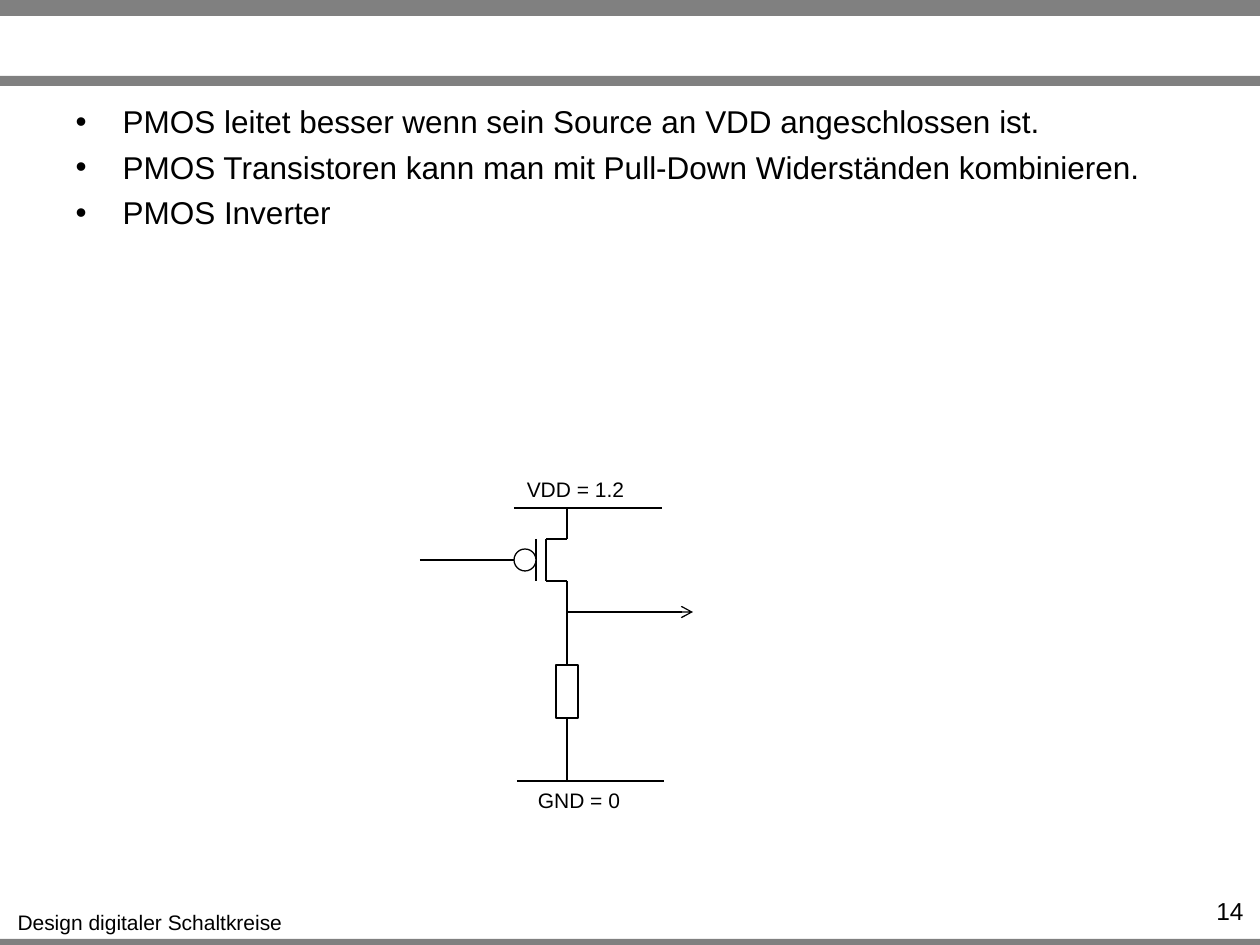
from itertools import pairwise

from lxml.etree import SubElement
from pptx import Presentation
from pptx.dml.color import RGBColor
from pptx.enum.shapes import MSO_CONNECTOR as Link, MSO_SHAPE as Form
from pptx.enum.text import MSO_ANCHOR as Anchor, MSO_AUTO_SIZE as Fit, PP_ALIGN as Align
from pptx.oxml.ns import qn
from pptx.util import Emu, Pt

BLACK = RGBColor(0x00, 0x00, 0x00)
WHITE = RGBColor(0xFF, 0xFF, 0xFF)
GREY = RGBColor(0x80, 0x80, 0x80)
FONT = "Arial"


def px(*nums):
    """Turn px, at 126 to the inch, into EMU."""
    return [Emu(round(n * 914400 / 126)) for n in nums]


def write(par, text, size=12, color=BLACK, align=Align.CENTER):
    par.alignment = align
    run = par.add_run()
    run.text = text
    run.font.name = FONT
    run.font.size = Pt(size)
    run.font.color.rgb = color


class Board:
    def __init__(self, slide, ink=BLACK, width=0.75):
        self.slide, self.ink, self.width = slide, ink, Pt(width)

    def shape(self, form, box, fill=None, edge=True):
        shape = self.slide.shapes.add_shape(form, *px(*box))
        shape.shadow.inherit = False
        if fill is None:
            shape.fill.background()
        else:
            shape.fill.solid()
            shape.fill.fore_color.rgb = fill
        if edge:
            shape.line.color.rgb = self.ink
            shape.line.width = self.width
        else:
            shape.line.fill.background()

    def label(self, text, box, wrap=False, **form):
        frame = self.slide.shapes.add_textbox(*px(*box)).text_frame
        frame.word_wrap = wrap
        write(frame.paragraphs[0], text, **form)

    def bullets(self, items, box):
        body = self.slide.placeholders[1]
        body.left, body.top, body.width, body.height = px(*box)
        frame = body.text_frame
        frame.auto_size = Fit.NONE
        frame.vertical_anchor = Anchor.TOP
        indent = px(47)[0]
        for i, item in enumerate(items):
            par = frame.add_paragraph() if i else frame.paragraphs[0]
            props = par._p.get_or_add_pPr()
            props.set("marL", str(indent))
            props.set("indent", str(-indent))
            par.space_before = Pt(4.4 if i else 0)
            SubElement(props, qn("a:buFont"), typeface=FONT)
            SubElement(props, qn("a:buChar"), char="•")
            write(par, item, size=18, align=Align.LEFT)

    def wire(self, *points, arrow=False):
        """Join the points in turn; an arrow sits at the end of each part."""
        for start, end in pairwise(points):
            line = self.slide.shapes.add_connector(Link.STRAIGHT, *px(*start, *end))
            line.line.color.rgb = self.ink
            line.line.width = self.width
            if arrow:
                SubElement(line.line._get_or_add_ln(), qn("a:tailEnd"), type="arrow")
            SubElement(line._element.spPr, qn("a:effectLst"))


def main():
    deck = Presentation()
    deck.slide_width, deck.slide_height = px(1260, 945)
    slide = deck.slides.add_slide(deck.slide_layouts[1])
    title = slide.shapes.title._element
    title.getparent().remove(title)
    board = Board(slide)

    for top, high in ((939, 10), (0, 16), (76, 10)):
        board.shape(Form.RECTANGLE, (0, top, 1260, high), fill=GREY, edge=False)
    board.label("Design digitaler Schaltkreise", (4, 903, 292, 38))
    board.bullets((
        "PMOS leitet besser wenn sein Source an VDD angeschlossen ist.",
        "PMOS Transistoren kann man mit Pull-Down Widerständen kombinieren.",
        "PMOS Inverter",
    ), (63, 96, 1134, 83))
    board.label("14", (1147, 890, 109, 30), wrap=True, size=14, align=Align.RIGHT)

    # Circuit: all parts hang on one vertical axis between the two rails
    axis, chan, gate, pin = 567, 546, 536, 514
    vdd, source, mid, drain, out, gnd = 508, 539, 560, 581, 612, 781
    rtop, rend = 665, 718

    board.wire((axis, vdd), (axis, source), (chan, source), (chan, drain),
               (axis, drain), (axis, out), (axis, rtop))
    board.wire((gate, source), (gate, drain))
    board.wire((420, mid), (494, mid), (pin, mid))
    board.shape(Form.OVAL, (pin, mid - 11, 22, 22), fill=WHITE)
    board.shape(Form.RECTANGLE, (axis - 11, rtop, 22, rend - rtop))
    board.wire((axis, rend), (axis, gnd))
    board.wire((axis, out), (693, out), arrow=True)
    board.wire((514, vdd), (662, vdd))
    board.wire((517, gnd), (664, gnd))
    board.label("VDD = 1.2", (514, 470, 123, 38))
    board.label("GND = 0", (525, 781, 108, 38))

    deck.save("out.pptx")


if __name__ == "__main__":
    main()
